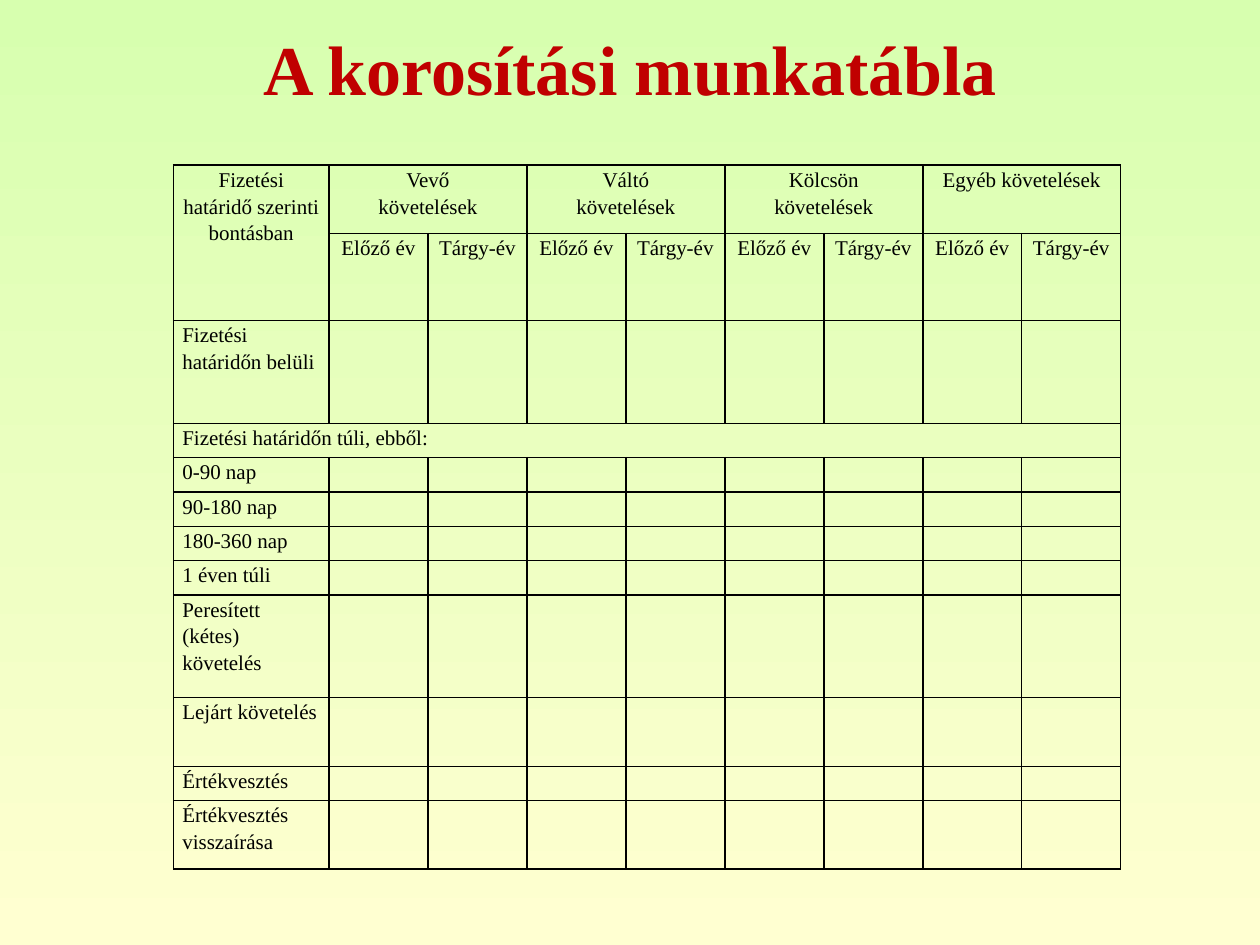
import pptx
import pptx.util
import pptx.dml.color
import pptx.enum.text
import pptx.oxml.ns
from lxml import etree

Pt = pptx.util.Pt
qn = pptx.oxml.ns.qn
ALIGN = pptx.enum.text.PP_ALIGN
FONT = "Times New Roman"
COLORS = {"top": "D7FFAF", "base": "FFFFD1", "title": "C00000", "ink": "000000"}
UNIT = 19.6  # height of a one-line row
GROUPS = ["Vevő\nkövetelések", "Váltó\nkövetelések",
          "Kölcsön\nkövetelések", "Egyéb követelések"]
YEARS = ["Előző év", "Tárgy-év"]
HEAD = "Fizetési határidő szerinti bontásban"
SPAN = "Fizetési határidőn túli, ebből:"
# Label and height in units
ROWS = [("Fizetési határidőn belüli", 3), (SPAN, 1), ("0-90 nap", 1),
        ("90-180 nap", 1), ("180-360 nap", 1), ("1 éven túli", 1),
        ("Peresített (kétes) követelés", 3), ("Lejárt követelés", 2),
        ("Értékvesztés", 1), ("Értékvesztés visszaírása", 2)]


def color(name):
    return pptx.dml.color.RGBColor.from_string(COLORS[name])


def paint(slide):
    fill = slide.background.fill
    fill.gradient()
    fill.gradient_angle = 270
    for stop, name in zip(fill.gradient_stops, ("top", "base")):
        stop.color.rgb = color(name)


def add_run(para, text, size, name, bold=False):
    run = para.add_run()
    run.text = text
    font = run.font
    font.name, font.size, font.bold = FONT, Pt(size), bold
    font.color.rgb = color(name)


def add_title(slide, text):
    box = slide.shapes.add_textbox(Pt(0), Pt(0), Pt(720), Pt(77))
    frame = box.text_frame
    frame.word_wrap = True
    frame.vertical_anchor = pptx.enum.text.MSO_ANCHOR.MIDDLE
    para = frame.paragraphs[0]
    para.alignment = ALIGN.CENTER
    add_run(para, text, 40, "title", True)


def style(cell):
    """Give a cell its borders, margins and clear fill."""
    cell.margin_left = cell.margin_right = Pt(5)
    cell.margin_top = cell.margin_bottom = Pt(0)
    props = cell._tc.get_or_add_tcPr()
    for side in ("lnL", "lnR", "lnT", "lnB"):
        line = etree.SubElement(props, qn("a:" + side), w=str(Pt(1)))
        solid = etree.SubElement(line, qn("a:solidFill"))
        etree.SubElement(solid, qn("a:srgbClr"), val=COLORS["ink"])
    cell.fill.background()
    # Keeps empty cells from stretching their row
    etree.SubElement(cell.text_frame.paragraphs[0]._p,
                     qn("a:endParaRPr"), sz="1200")


def write(cell, text, align=ALIGN.CENTER):
    frame = cell.text_frame
    for num, line in enumerate(text.split("\n")):
        para = frame.add_paragraph() if num else frame.paragraphs[0]
        para.alignment = align
        para.line_spacing = 1.15
        add_run(para, line, 12, "ink")


def add_grid(slide):
    units = [2, 2] + [size for _, size in ROWS]
    widths = [88.8] + [56.57] * len(GROUPS) * len(YEARS)
    grid = slide.shapes.add_table(len(units), len(widths), Pt(99.2), Pt(94.3),
                                  Pt(sum(widths)), Pt(sum(units) * UNIT)).table
    grid.first_row = grid.horz_banding = False
    for col, width in zip(grid.columns, widths):
        col.width = Pt(width)
    for row, size in zip(grid.rows, units):
        row.height = Pt(size * UNIT)
    for cell in grid.iter_cells():
        style(cell)

    grid.cell(0, 0).merge(grid.cell(1, 0))
    write(grid.cell(0, 0), HEAD)
    for num, group in enumerate(GROUPS):
        left = 1 + num * len(YEARS)
        grid.cell(0, left).merge(grid.cell(0, left + 1))
        write(grid.cell(0, left), group)
        for step, year in enumerate(YEARS):
            write(grid.cell(1, left + step), year)
    for num, (label, _) in enumerate(ROWS, 2):
        if label == SPAN:
            grid.cell(num, 0).merge(grid.cell(num, len(widths) - 1))
        write(grid.cell(num, 0), label, ALIGN.JUSTIFY)


def main():
    deck = pptx.Presentation()
    deck.slide_width, deck.slide_height = Pt(720), Pt(540)
    slide = deck.slides.add_slide(deck.slide_layouts[6])
    paint(slide)
    add_title(slide, "A korosítási munkatábla")
    add_grid(slide)
    deck.save("out.pptx")


if __name__ == "__main__":
    main()
